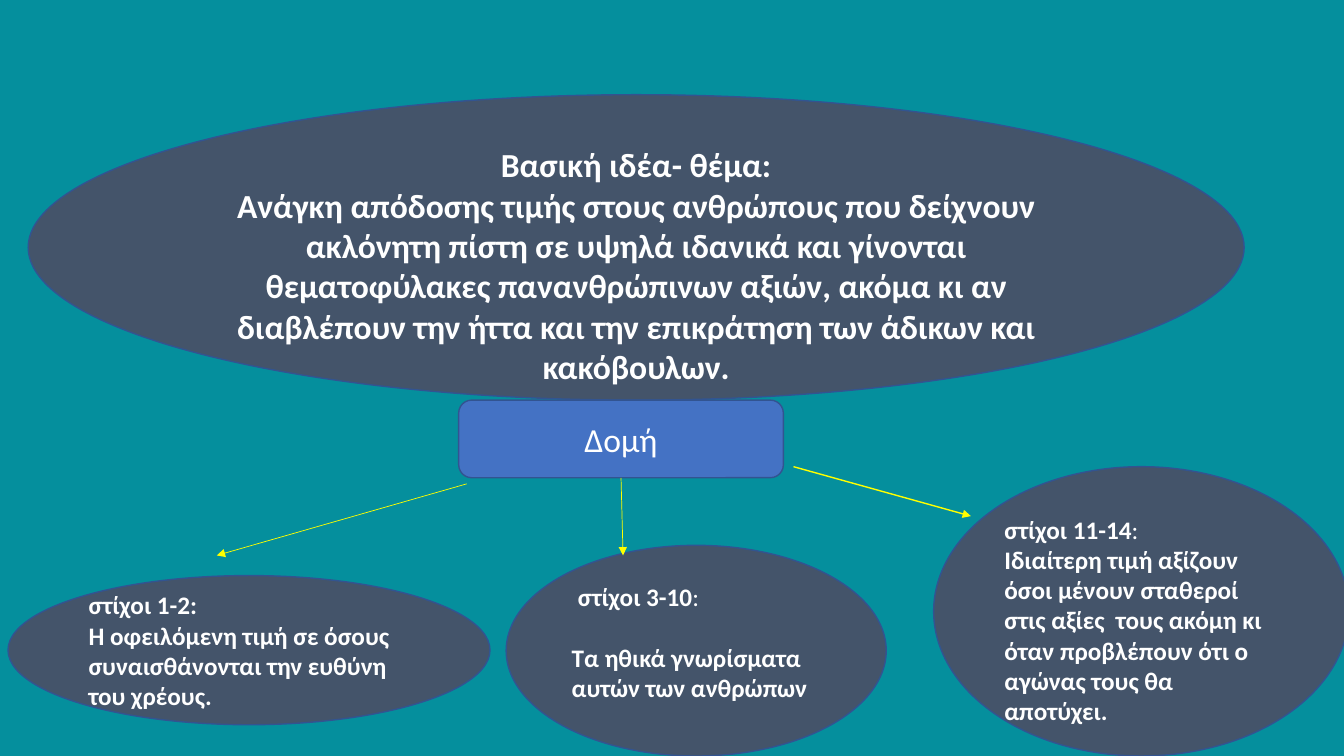
from lxml import etree
from pptx import Presentation
from pptx.dml.color import RGBColor
from pptx.enum.shapes import MSO_CONNECTOR, MSO_SHAPE
from pptx.enum.text import MSO_ANCHOR, PP_ALIGN
from pptx.oxml.ns import qn
from pptx.util import Inches, Pt

OVAL, ROUNDED = MSO_SHAPE.OVAL, MSO_SHAPE.ROUNDED_RECTANGLE
TOP, MIDDLE = MSO_ANCHOR.TOP, MSO_ANCHOR.MIDDLE
LEFT, CENTER = PP_ALIGN.LEFT, PP_ALIGN.CENTER
STRAIGHT = MSO_CONNECTOR.STRAIGHT

TEAL = RGBColor(0x05, 0x8F, 0x9D)
SLATE = RGBColor(0x44, 0x54, 0x6A)
BLUE = RGBColor(0x44, 0x72, 0xC4)
OUTLINE = RGBColor(0x32, 0x54, 0x91)
YELLOW = RGBColor(0xFF, 0xFF, 0x00)
WHITE = RGBColor(0xFF, 0xFF, 0xFF)

HEADLINE = {"size": Pt(24), "bold": True}
LABEL = {"size": Pt(24), "bold": False}
BODY = {"size": Pt(18), "bold": True}
FIRST_INDENT, VERSE_GAP = Inches(0.06), Pt(22)

# Places are percentages of the slide's width and height.
IDEAS = [
    {"place": (2.1, 12.53, 90.47, 40.4), "form": OVAL, "fill": SLATE,
     "anchor": TOP, "align": CENTER, "font": HEADLINE,
     "heading": "Βασική ιδέα- θέμα:",
     "body": "Ανάγκη απόδοσης τιμής στους ανθρώπους που δείχνουν ακλόνητη "
             "πίστη σε υψηλά ιδανικά και γίνονται θεματοφύλακες "
             "πανανθρώπινων αξιών, ακόμα κι αν διαβλέπουν την ήττα και την "
             "επικράτηση των άδικων και κακόβουλων."},
    {"place": (34.13, 52.93, 24.16, 10.27), "form": ROUNDED, "fill": BLUE,
     "anchor": MIDDLE, "align": CENTER, "font": LABEL, "heading": "Δομή"},
    {"place": (0.6, 76.13, 35.86, 19.73), "form": OVAL, "fill": SLATE,
     "anchor": MIDDLE, "align": LEFT, "font": BODY,
     "heading": "στίχοι 1-2:",
     "body": "Η οφειλόμενη τιμή σε όσους συναισθάνονται την ευθύνη του "
             "χρέους."},
    {"place": (69.47, 61.73, 30.91, 38.27), "form": OVAL, "fill": SLATE,
     "anchor": TOP, "align": LEFT, "font": BODY,
     "heading": "στίχοι 11-14", "plain_end": ":",
     "body": "Ιδιαίτερη τιμή αξίζουν όσοι μένουν σταθεροί στις αξίες  τους "
             "ακόμη κι όταν προβλέπουν ότι ο αγώνας τους θα αποτύχει."},
    {"place": (37.66, 72.13, 28.28, 27.87), "form": OVAL, "fill": SLATE,
     "anchor": TOP, "align": LEFT, "font": BODY,
     "heading": "στίχοι 3-10", "plain_end": ":",
     "indent": FIRST_INDENT, "gap": VERSE_GAP,
     "body": "Τα ηθικά γνωρίσματα αυτών των ανθρώπων"},
]
ARROWS = [
    ((34.73, 64), (16.13, 73.47), 0.5),
    ((59.04, 61.73), (72.24, 68.27), 1),
    ((46.21, 63.2), (46.36, 73.47), 0.5),
]

deck = Presentation()
deck.slide_width, deck.slide_height = Inches(13.33), Inches(7.5)
slide = deck.slides.add_slide(deck.slide_layouts[6])
slide.background.fill.solid()
slide.background.fill.fore_color.rgb = TEAL


def to_slide(shares):
    sides = (deck.slide_width, deck.slide_height) * (len(shares) // 2)
    return [int(side * share / 100) for side, share in zip(sides, shares)]


def add_run(paragraph, text, font_format):
    run = paragraph.add_run()
    run.text = text
    for attribute, value in {"name": "Calibri", **font_format}.items():
        setattr(run.font, attribute, value)
    run.font.color.rgb = WHITE


def add_idea(idea):
    bubble = slide.shapes.add_shape(idea["form"], *to_slide(idea["place"]))
    bubble.shadow.inherit = False
    bubble.fill.solid()
    bubble.fill.fore_color.rgb = idea["fill"]
    bubble.line.color.rgb = OUTLINE
    bubble.line.width = Pt(1)
    frame = bubble.text_frame
    frame.word_wrap = True
    frame.vertical_anchor = idea["anchor"]
    heading = frame.paragraphs[0]
    heading.alignment = idea["align"]
    if "indent" in idea:
        heading._p.get_or_add_pPr().set("marL", str(idea["indent"]))
    add_run(heading, idea["heading"], idea["font"])
    if "plain_end" in idea:
        add_run(heading, idea["plain_end"], {**idea["font"], "bold": False})
    if "body" in idea:
        body = frame.add_paragraph()
        body.alignment = idea["align"]
        body.space_before = idea.get("gap", Pt(0))
        add_run(body, idea["body"], idea["font"])


def add_arrow(start, end, width):
    arrow = slide.shapes.add_connector(STRAIGHT, *to_slide(start + end))
    arrow.line.color.rgb = YELLOW
    arrow.line.width = Pt(width)
    etree.SubElement(arrow.line._get_or_add_ln(), qn("a:tailEnd"), type="triangle")
    etree.SubElement(arrow._element.spPr, qn("a:effectLst"))


for idea in IDEAS:
    add_idea(idea)
for start, end, width in ARROWS:
    add_arrow(start, end, width)

deck.save("out.pptx")
